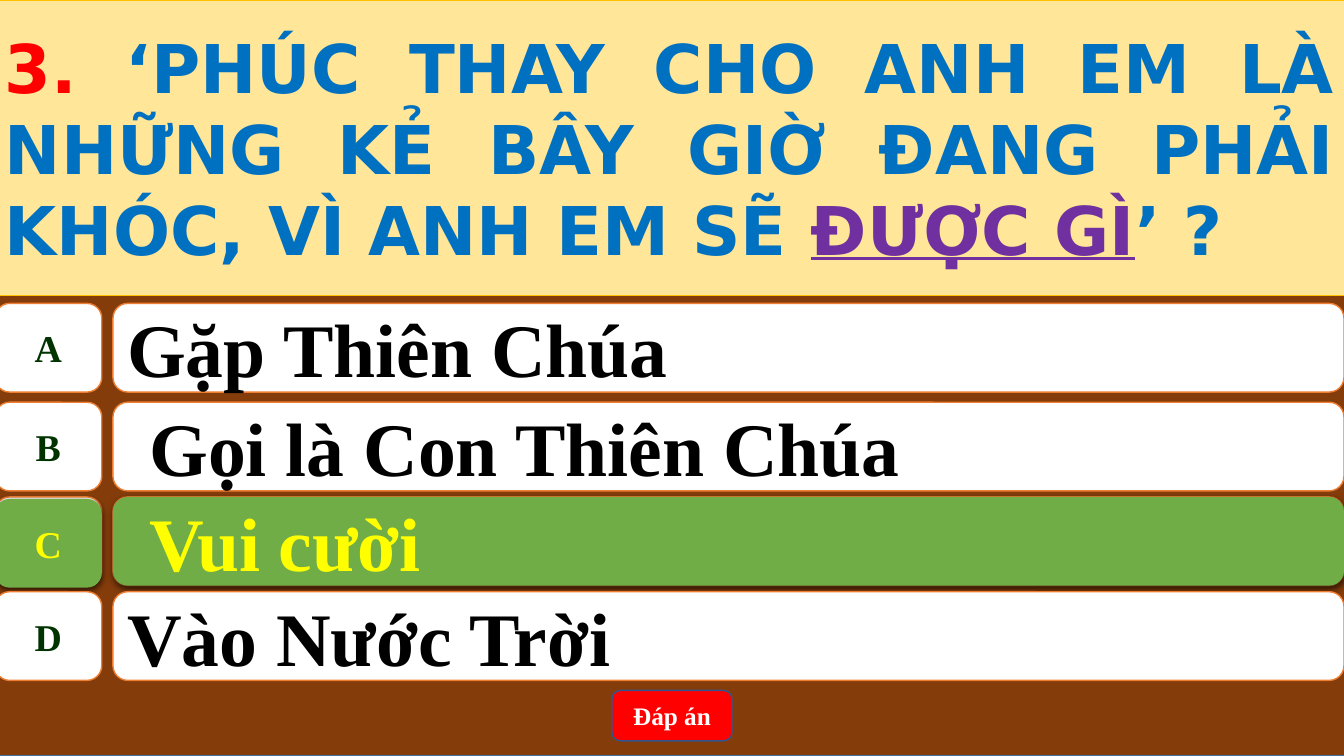
import pptx
import pptx.util
import pptx.dml.color
import pptx.enum.shapes
import pptx.enum.text
import pptx.oxml.ns
import lxml.etree

Inches, Pt = pptx.util.Inches, pptx.util.Pt
MSO = pptx.enum.shapes.MSO_SHAPE
ALIGN = pptx.enum.text.PP_ALIGN
SERIF = "Times New Roman"
SHADOW = (
    '<a:effectLst xmlns:a="http://schemas.openxmlformats.org/drawingml/2006/main">'
    '<a:outerShdw blurRad="57150" dist="19050" dir="5400000" algn="ctr" rotWithShape="0">'
    '<a:srgbClr val="000000"><a:alpha val="63000"/></a:srgbClr>'
    '</a:outerShdw></a:effectLst>'
)


def rgb(value):
    return pptx.dml.color.RGBColor.from_string(value)


class QuizSlide:
    left, bar_left, row_height = -0.05, 1.12, 0.88

    def __init__(self, prs):
        self.s = prs.slides.add_slide(prs.slide_layouts[6])

    def box(self, kind, x, y, w, h, fill, line=None, line_width=1):
        sp = self.s.shapes.add_shape(kind, Inches(x), Inches(y), Inches(w), Inches(h))
        sp.shadow.inherit = False
        sp.fill.solid()
        sp.fill.fore_color.rgb = rgb(fill)
        if line:
            sp.line.color.rgb = rgb(line)
            sp.line.width = Pt(line_width)
        else:
            sp.line.fill.background()
        return sp

    def label_text(self, sp, runs, size, color, font=SERIF, align=ALIGN.LEFT, wrap=True):
        tf = sp.text_frame
        tf.word_wrap = wrap
        tf.vertical_anchor = pptx.enum.text.MSO_ANCHOR.MIDDLE
        p = tf.paragraphs[0]
        p.alignment = align
        p.font.name, p.font.size, p.font.bold = font, Pt(size), True
        p.font.color.rgb = rgb(color)
        for text, run_color, underline in runs:
            r = p.add_run()
            r.text = text
            r.font.color.rgb = rgb(run_color or color)
            if underline:
                r.font.underline = True
        return p

    def plates(self, y, fill, line=None, label_drop=0):
        label = self.box(MSO.FLOWCHART_ALTERNATE_PROCESS, self.left, y + label_drop,
                         1.06, self.row_height, fill, line)
        bar = self.box(MSO.ROUNDED_RECTANGLE, self.bar_left, y, 12.21, self.row_height, fill, line)
        return label, bar

    def answer(self, y, letter, text, indented, correct):
        label, bar = self.plates(y, "FFFFFF", "ED7D31")
        letter_color, text_color = "003300", "000000"
        if correct:
            label, bar = self.plates(y, "70AD47", label_drop=0.02)
            letter_color = text_color = "FFFF00"
            for sp in (label, bar):
                pr = sp._element.spPr
                pr.remove(pr.find(pptx.oxml.ns.qn("a:effectLst")))
                pr.append(lxml.etree.fromstring(SHADOW))
        self.label_text(label, [(letter, None, False)], 27, letter_color,
                        align=ALIGN.CENTER, wrap=False)
        p = self.label_text(bar, [(text, None, False)], 54, text_color)
        if indented:
            pPr = p._p.get_or_add_pPr()
            pPr.set("marL", str(Inches(0.5)))
            pPr.set("indent", str(Inches(-0.28)))

    def question(self, runs):
        sp = self.box(MSO.RECTANGLE, self.left, 0, 13.39, 2.93, "FFE699", "FFC000", 0.5)
        self.label_text(sp, runs, 48, "0070C0", "DejaVu Sans", ALIGN.JUSTIFY)

    def button(self, text):
        sp = self.box(MSO.ROUNDED_RECTANGLE, 6.07, 6.85, 1.19, 0.5, "FF0000", "325491")
        self.label_text(sp, [(text, None, False)], 18, "FFFFFF", align=ALIGN.CENTER)


def main():
    prs = pptx.Presentation()
    prs.slide_width, prs.slide_height = Inches(13.33), Inches(7.5)
    quiz = QuizSlide(prs)
    quiz.box(MSO.RECTANGLE, quiz.left, 0, 13.39, 7.5, "843C0B", "43739E")
    quiz.question([
        ("3. ", "FF0000", False),
        ("‘PHÚC THAY CHO ANH EM LÀ NHỮNG KẺ BÂY GIỜ ĐANG PHẢI KHÓC, VÌ ANH EM SẼ ", None, False),
        ("ĐƯỢC GÌ", "7030A0", True),
        ("’ ?", None, False),
    ])
    answers = [
        (3.01, "A", "Gặp Thiên Chúa", False, False),
        (3.99, "B", "Gọi là Con Thiên Chúa", True, False),
        (4.93, "C", "Vui cười", True, True),
        (5.87, "D", "Vào Nước Trời", False, False),
    ]
    for row in answers:
        quiz.answer(*row)
    quiz.button("Đáp án")
    prs.save("out.pptx")


if __name__ == "__main__":
    main()
